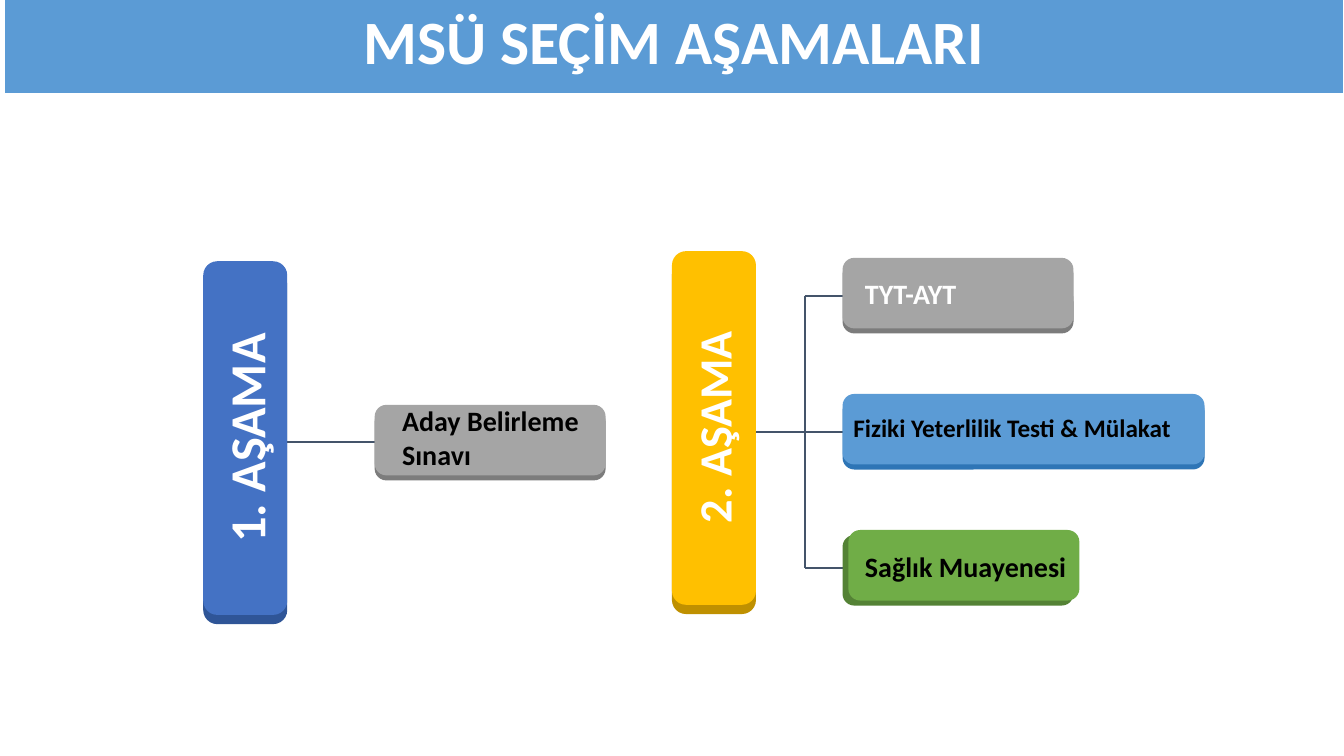
"""Build the slide on the two selection stages, laid out on a 16 by 9 grid."""
from dataclasses import dataclass

from lxml import etree
from pptx import Presentation
from pptx.dml.color import RGBColor
from pptx.enum.shapes import MSO_CONNECTOR, MSO_SHAPE
from pptx.enum.text import MSO_ANCHOR, PP_ALIGN
from pptx.oxml.ns import qn
from pptx.util import Inches, Pt

RECTANGLE, ROUNDED = MSO_SHAPE.RECTANGLE, MSO_SHAPE.ROUNDED_RECTANGLE
STRAIGHT = MSO_CONNECTOR.STRAIGHT
LEFT, CENTER = PP_ALIGN.LEFT, PP_ALIGN.CENTER
TOP, MIDDLE = MSO_ANCHOR.TOP, MSO_ANCHOR.MIDDLE


@dataclass(frozen=True)
class Theme:
    font: str = "Calibri"
    white: str = "FFFFFF"
    black: str = "000000"
    line: str = "44546A"
    sky: tuple = ("5B9BD5", "2E75B6")
    blue: tuple = ("4472C4", "2F5597")
    gold: tuple = ("FFC000", "BF9000")
    gray: tuple = ("A5A5A5", "7C7C7C")
    green: tuple = ("70AD47", "548235")
    title_size: int = 44
    first_stage_size: int = 36
    second_stage_size: int = 33
    label_size: int = 20
    small_label_size: int = 18
    line_width: float = 1.5


theme = Theme()
presentation = Presentation()
presentation.slide_width, presentation.slide_height = Inches(13.33), Inches(7.5)
column, row = presentation.slide_width / 16, presentation.slide_height / 9
slide = presentation.slides.add_slide(presentation.slide_layouts[6])


def add_block(kind, left, top, width, height, color):
    """Add a flat filled shape at a grid position."""
    shape = slide.shapes.add_shape(kind, int(left * column), int(top * row),
                                   int(width * column), int(height * row))
    shape.shadow.inherit = False
    shape.fill.solid()
    shape.fill.fore_color.rgb = RGBColor.from_string(color)
    shape.line.fill.background()
    return shape


def write_text(shape, text, size, color, alignment, anchor):
    """Write one bold run into a shape."""
    frame = shape.text_frame
    frame.word_wrap = True
    frame.vertical_anchor = anchor
    paragraph = frame.paragraphs[0]
    paragraph.alignment = alignment
    run = paragraph.add_run()
    run.text = text
    run.font.name, run.font.size, run.font.bold = theme.font, Pt(size), True
    run.font.color.rgb = RGBColor.from_string(color)
    return paragraph


title = add_block(RECTANGLE, 0.05, -0.07, 15.95, 1.19, theme.sky[0])
title.line.color.rgb = RGBColor.from_string(theme.white)
title.line.width = Pt(theme.line_width)
heading = write_text(title, "MSÜ SEÇİM AŞAMALARI", theme.title_size, theme.white, CENTER, MIDDLE)
heading.line_spacing = 0.9

first_axis, second_axis = 5.26, 5.14
trunk, branch_end, step = 9.58, 10.1, 1.62
lines = [
    (3.34, first_axis, 4.54, first_axis),
    (8.9, second_axis, trunk, second_axis),
    (trunk, second_axis - step, trunk, second_axis + step),
]
for offset in (-step, 0, step):
    lines.append((trunk, second_axis + offset, branch_end, second_axis + offset))
for start_x, start_y, end_x, end_y in lines:
    connector = slide.shapes.add_connector(
        STRAIGHT, int(start_x * column), int(start_y * row), int(end_x * column), int(end_y * row))
    connector.line.color.rgb = RGBColor.from_string(theme.line)
    connector.line.width = Pt(theme.line_width)
    etree.SubElement(connector._element.spPr, qn("a:effectLst"))

bar_width, bar_height, box_width, box_height = 1, 4.21, 2.75, 0.84
box_left, box_top = 10.03, 3.07
blocks = [
    (2.42, 3.11, bar_width, bar_height, theme.blue, 0, 0.11),
    (8, 2.99, bar_width, bar_height, theme.gold, 0, 0.11),
    (4.46, 4.82, box_width, box_height, theme.gray, 0, 0.06),
    (box_left, box_top, box_width, box_height, theme.gray, 0, 0.06),
    (box_left, box_top + step, 4.31, box_height, theme.sky, 0, 0.06),
    (box_left + 0.07, box_top + 2 * step, box_width, box_height, theme.green, -0.07, 0.06),
]
for left, top, width, height, (face, edge), shift_x, shift_y in blocks:
    add_block(ROUNDED, left + shift_x, top + shift_y, width, height, edge)
    add_block(ROUNDED, left, top, width, height, face)

labels = [
    ("1. AŞAMA", 0.83, 4.79, 4.19, 0.85, theme.first_stage_size, theme.white, CENTER, 270),
    ("2. AŞAMA", 6.4, 4.69, 4.19, 0.79, theme.second_stage_size, theme.white, CENTER, 270),
    ("Aday Belirleme Sınavı", 4.67, 4.75, 2.86, 0.92, theme.label_size, theme.black, LEFT, 0),
    ("TYT-AYT", 10.18, 3.23, 2.58, 0.54, theme.label_size, theme.white, LEFT, 0),
    ("Fiziki Yeterlilik Testi & Mülakat", 10.04, 4.85, 4.18, 0.48,
     theme.small_label_size, theme.black, LEFT, 0),
    ("Sağlık Muayenesi", 10.18, 6.48, 2.82, 0.53, theme.label_size, theme.black, LEFT, 0),
]
for text, left, top, width, height, size, color, alignment, rotation in labels:
    label = slide.shapes.add_textbox(int(left * column), int(top * row),
                                     int(width * column), int(height * row))
    label.rotation = rotation
    write_text(label, text, size, color, alignment, TOP)

presentation.save("out.pptx")
